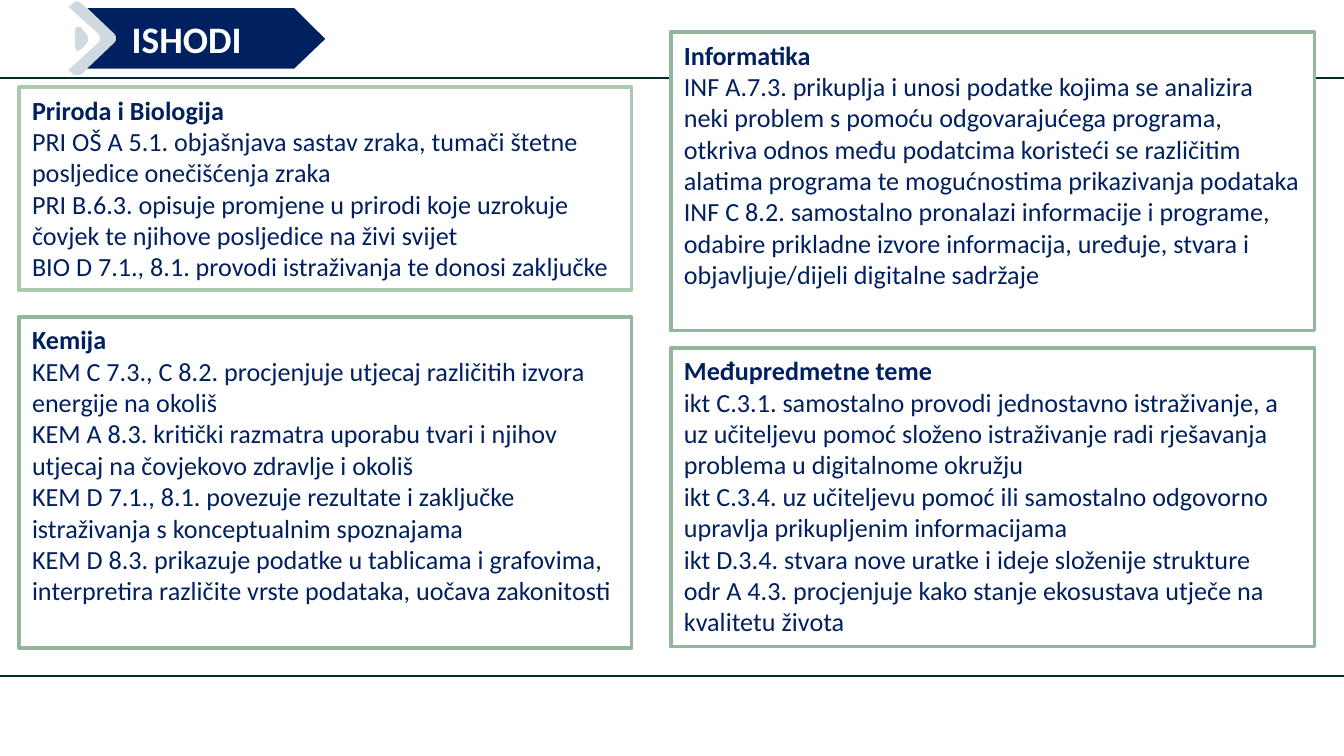
from lxml.etree import SubElement
from pptx import Presentation
from pptx.dml.color import RGBColor
from pptx.enum.shapes import MSO_CONNECTOR as Connector, MSO_SHAPE as Shape
from pptx.enum.text import MSO_ANCHOR as Anchor, PP_ALIGN as Align
from pptx.oxml.ns import qn
from pptx.util import Pt

PX = 9144  # EMU per px, 100 px to the inch
PAGE_W = 1000

NAVY = RGBColor(0x00, 0x20, 0x60)
WHITE = RGBColor(0xFF, 0xFF, 0xFF)
SILVER = RGBColor(0xCF, 0xD9, 0xE0)
RULE = RGBColor(0x00, 0x29, 0x30)
SAGE = RGBColor(0x93, 0xB6, 0x9C)
PALE_SAGE = RGBColor(0xAB, 0xC9, 0xAF)

# Outlines relative to the banner box: 2 numbers are a corner, 6 a curve
CHEVRON = [
    (6, 0), (5, 0, 4, 1, 3, 2), (0, 4), (22, 24), (24, 26, 24, 29, 22, 31),
    (0, 51), (3, 54), (4, 55, 5, 55, 6, 55), (8, 55, 9, 55, 10, 54),
    (34, 31), (36, 29, 36, 26, 34, 24), (10, 2), (9, 1, 8, 0, 6, 0),
]
DROP = [
    (7, 19), (6, 19, 5, 20, 5, 21), (5, 34), (5, 36, 6, 37, 7, 37),
    (8, 37, 8, 36, 9, 36), (13, 32), (15, 30, 15, 26, 13, 24),
    (9, 19), (8, 19, 8, 19, 7, 19),
]
ARROW = [
    (14, 5), (34, 24), (36, 26, 36, 29, 34, 31), (14, 50),
    (168, 50), (191, 28), (168, 5),
]

# Box, border colour, heading and outcomes of each subject
SUBJECTS = [
    ((14, 65, 456, 151), PALE_SAGE, "Priroda i Biologija", [
        "PRI OŠ A 5.1. objašnjava sastav zraka, tumači štetne posljedice onečišćenja zraka",
        "PRI B.6.3. opisuje promjene u prirodi koje uzrokuje čovjek te njihove posljedice na živi svijet",
        "BIO D 7.1., 8.1. provodi istraživanja te donosi zaključke",
    ]),
    ((14, 236, 456, 246), SAGE, "Kemija", [
        "KEM C 7.3., C 8.2. procjenjuje utjecaj različitih izvora energije na okoliš",
        "KEM A 8.3. kritički razmatra uporabu tvari i njihov utjecaj na čovjekovo zdravlje i okoliš",
        "KEM D 7.1., 8.1. povezuje rezultate i zaključke istraživanja s konceptualnim spoznajama",
        "KEM D 8.3. prikazuje podatke u tablicama i grafovima, interpretira različite vrste podataka, "
        "uočava zakonitosti",
    ]),
    ((499, 24, 479, 222), SAGE, "Informatika", [
        "INF A.7.3. prikuplja i unosi podatke kojima se analizira neki problem s pomoću odgovarajućega "
        "programa, otkriva odnos među podatcima koristeći se različitim alatima programa te mogućnostima "
        "prikazivanja podataka",
        "INF C 8.2. samostalno pronalazi informacije i programe, odabire prikladne izvore informacija, "
        "uređuje, stvara i objavljuje/dijeli digitalne sadržaje",
    ]),
    ((499, 259, 479, 222), SAGE, "Međupredmetne teme", [
        "ikt C.3.1. samostalno provodi jednostavno istraživanje, a uz učiteljevu pomoć složeno "
        "istraživanje radi rješavanja problema u digitalnome okružju",
        "ikt C.3.4. uz učiteljevu pomoć ili samostalno odgovorno upravlja prikupljenim informacijama",
        "ikt D.3.4. stvara nove uratke i ideje složenije strukture",
        "odr A 4.3. procjenjuje kako stanje ekosustava utječe na kvalitetu života",
    ]),
]


def emu(*lengths):
    return [round(length * PX) for length in lengths]


def write(para, text, size=14, color=NAVY, bold=False):
    para.alignment = Align.LEFT
    span = para.add_run()
    span.text = text
    span.font.name = "Calibri"
    span.font.size = Pt(size)
    span.font.bold = bold
    span.font.color.rgb = color


def add_rule(page, y):
    rule = page.shapes.add_connector(Connector.STRAIGHT, *emu(0, y, PAGE_W, y))
    rule.line.color.rgb = RULE
    rule.line.width = Pt(0.75)
    SubElement(rule._element.spPr, qn("a:effectLst"))


def add_subject(page, box, border, heading, outcomes):
    card = page.shapes.add_shape(Shape.RECTANGLE, *emu(*box))
    card.shadow.inherit = False
    card.fill.solid()
    card.fill.fore_color.rgb = WHITE
    card.line.color.rgb = border
    card.line.width = Pt(2)
    frame = card.text_frame
    frame.word_wrap = True
    frame.vertical_anchor = Anchor.TOP
    write(frame.paragraphs[0], heading, bold=True)
    for outcome in outcomes:
        write(frame.add_paragraph(), outcome)


def trace(outline, steps=8):
    """Turn corners and cubic curves into a list of points."""
    points = []
    for part in outline:
        if len(part) == 2:
            points.append(part)
            continue
        x0, y0 = points[-1]
        x1, y1, x2, y2, x3, y3 = part
        for step in range(1, steps + 1):
            t = step / steps
            a, b, c, d = (1 - t) ** 3, 3 * t * (1 - t) ** 2, 3 * t * t * (1 - t), t ** 3
            points.append((a * x0 + b * x1 + c * x2 + d * x3,
                           a * y0 + b * y1 + c * y2 + d * y3))
    return points


def add_outline(page, left, top, outline, color):
    points = [emu(left + x, top + y) for x, y in trace(outline)]
    builder = page.shapes.build_freeform(*points[0], scale=1.0)
    builder.add_line_segments(points[1:], close=True)
    shape = builder.convert_to_shape()
    shape.shadow.inherit = False
    shape.fill.solid()
    shape.fill.fore_color.rgb = color
    shape.line.fill.background()


def add_banner(page, box, text):
    left, top, width, height = box
    for outline, color in ((CHEVRON, SILVER), (DROP, SILVER), (ARROW, NAVY)):
        add_outline(page, left, top, outline, color)
    # Title lies on top of the arrow
    title = page.shapes.title
    title.left, title.top, title.width, title.height = emu(left + 47, top + 5, width - 70, height - 10)
    frame = title.text_frame
    frame.margin_left = frame.margin_right = frame.margin_top = frame.margin_bottom = 0
    frame.vertical_anchor = Anchor.MIDDLE
    write(frame.paragraphs[0], text, size=20, color=WHITE, bold=True)
    page.shapes._spTree.append(title._element)


def main():
    deck = Presentation()
    deck.slide_width = PAGE_W * PX
    deck.slide_height = deck.slide_width * 9 // 16
    page = deck.slides.add_slide(deck.slide_layouts[5])
    for y in (58, 503):
        add_rule(page, y)
    for subject in SUBJECTS:
        add_subject(page, *subject)
    add_banner(page, (51, 1, 191, 55), "ISHODI")
    deck.save("out.pptx")


if __name__ == "__main__":
    main()
